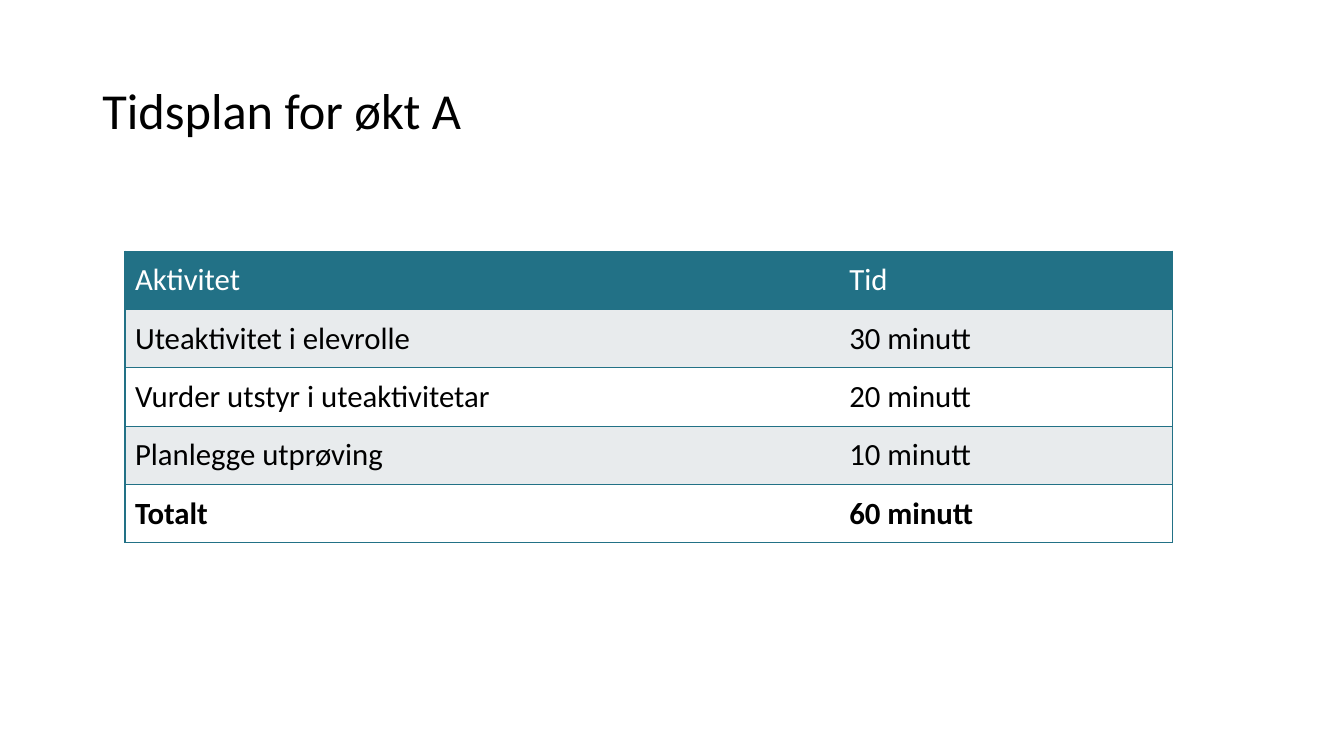
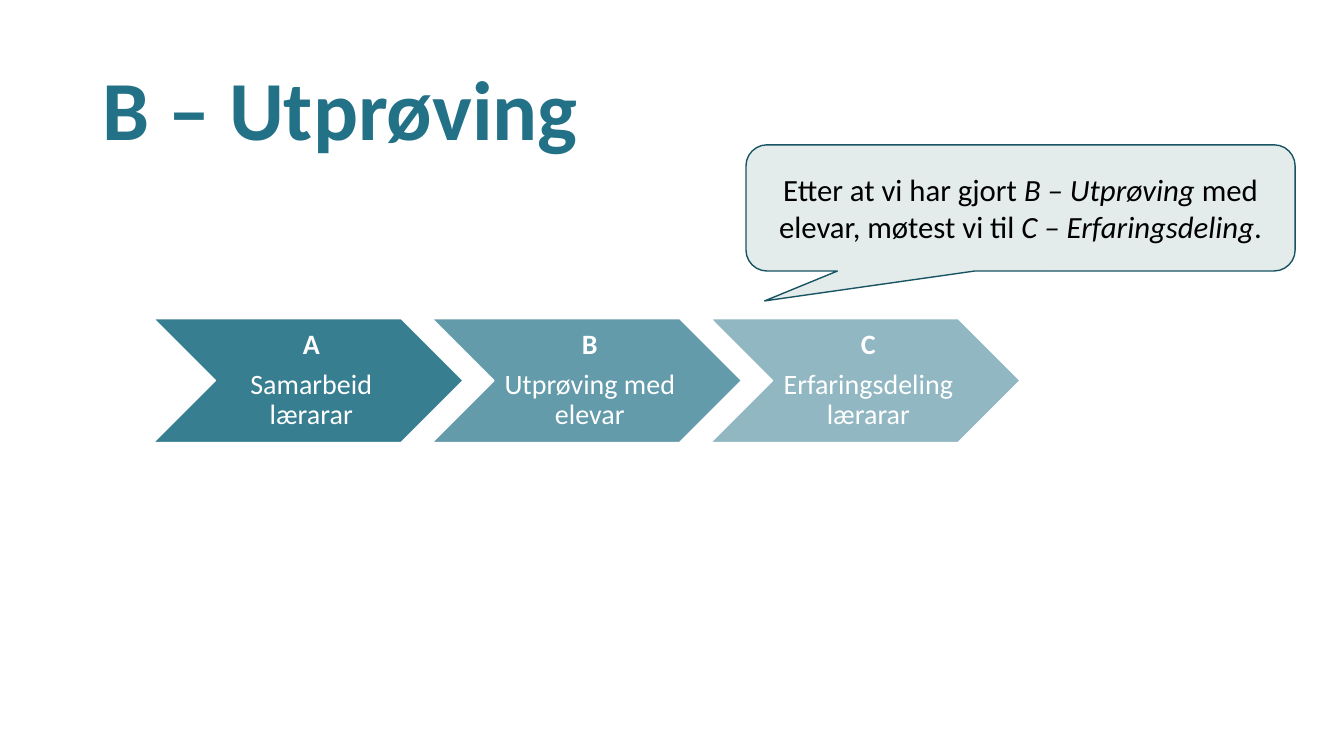
from dataclasses import dataclass

from lxml import etree
from pptx import Presentation
from pptx.dml.color import RGBColor
from pptx.enum.shapes import MSO_SHAPE
from pptx.enum.text import MSO_ANCHOR, PP_ALIGN
from pptx.oxml.ns import qn
from pptx.util import Cm, Pt

CHEVRON = MSO_SHAPE.CHEVRON
CALLOUT = MSO_SHAPE.ROUNDED_RECTANGULAR_CALLOUT
MIDDLE = MSO_ANCHOR.MIDDLE
LEFT, CENTER = PP_ALIGN.LEFT, PP_ALIGN.CENTER

FONT = "Calibri"
TEAL, DARK_TEAL = "227186", "195463"
BLACK, WHITE = "000000", "FFFFFF"
BAND_GREY, CALLOUT_FILL = "E8EBED", "E3ECEA"


@dataclass(frozen=True)
class Span:
    text: str
    bold: bool = False
    italic: bool = False


@dataclass(frozen=True)
class Box:
    left: float
    top: float
    width: float
    height: float

    def lengths(self) -> tuple:
        return Cm(self.left), Cm(self.top), Cm(self.width), Cm(self.height)


@dataclass(frozen=True)
class Step:
    letter: str
    label: str
    opacity: int


TITLE_BOX = Box(2.33, 1.01, 29.21, 3.68)
TABLE_BOX = Box(3.15, 6.33, 26.4, 7.35)
COLUMN_WIDTHS = (18, 8.4)
FIRST_STEP = Box(3.87, 8.03, 7.8, 3.12)
STEP_PITCH = 0.9 * FIRST_STEP.width
CALLOUT_BOX = Box(18.8, 3.65, 13.84, 3.18)

SCHEDULE = (
    ("Aktivitet", "Tid"),
    ("Uteaktivitet i elevrolle", "30 minutt"),
    ("Vurder utstyr i uteaktivitetar", "20 minutt"),
    ("Planlegge utprøving", "10 minutt"),
    ("Totalt", "60 minutt"),
)
STEPS = (
    Step("A", "Samarbeid lærarar", 90),
    Step("B", "Utprøving med elevar", 70),
    Step("C", "Erfaringsdeling lærarar", 50),
)
CALLOUT_SPANS = (
    Span("Etter at vi har gjort "),
    Span("B – Utprøving ", italic=True),
    Span("med elevar, møtest vi til "),
    Span("C – Erfaringsdeling", italic=True),
    Span("."),
)


def paint(color_owner, color: str) -> None:
    color_owner.solid()
    color_owner.fore_color.rgb = RGBColor.from_string(color)


def write(para, spans, size: float, color: str, align=LEFT, spacing: float = 1) -> None:
    para.alignment = align
    para.line_spacing = spacing
    for span in spans:
        run = para.add_run()
        run.text = span.text
        run.font.name = FONT
        run.font.size = Pt(size)
        run.font.bold = span.bold
        run.font.italic = span.italic
        paint(run.font.fill, color)


def add_text_frame(page, box: Box):
    frame = page.shapes.add_textbox(*box.lengths()).text_frame
    frame.word_wrap = True
    frame.vertical_anchor = MIDDLE
    return frame


def add_title(page, title: Span, size: float, color: str) -> None:
    frame = add_text_frame(page, TITLE_BOX)
    write(frame.paragraphs[0], [title], size, color, spacing=0.9)


def add_shape(page, kind, box: Box, fill: str, line: str):
    shape = page.shapes.add_shape(kind, *box.lengths())
    shape.shadow.inherit = False
    paint(shape.fill, fill)
    paint(shape.line.fill, line)
    shape.line.width = Pt(1)
    return shape


def set_opacity(shape, percent: int) -> None:
    color = shape.fill._xPr.find(qn("a:solidFill"))[0]
    etree.SubElement(color, qn("a:alpha"), val=str(percent * 1000))


def set_borders(cell, visible: str) -> None:
    properties = cell._tc.get_or_add_tcPr()
    for index, side in enumerate("LRTB"):
        line = etree.Element(qn(f"a:ln{side}"), w=str(Pt(1)))
        if side in visible:
            fill = etree.SubElement(line, qn("a:solidFill"))
            etree.SubElement(fill, qn("a:srgbClr"), val=TEAL)
        else:
            etree.SubElement(line, qn("a:noFill"))
        properties.insert(index, line)


def add_schedule(page) -> None:
    last_row = len(SCHEDULE) - 1
    table = page.shapes.add_table(
        len(SCHEDULE), len(COLUMN_WIDTHS), *TABLE_BOX.lengths()
    ).table
    for column, width in zip(table.columns, COLUMN_WIDTHS):
        column.width = Cm(width)
    for row, texts in enumerate(SCHEDULE):
        fill = TEAL if row == 0 else BAND_GREY if row % 2 else WHITE
        for column, text in enumerate(texts):
            cell = table.cell(row, column)
            cell.vertical_anchor = MIDDLE
            paint(cell.fill, fill)
            set_borders(cell, "RTB" if column else "LTB")
            span = Span(text, bold=row == last_row)
            color = BLACK if row else WHITE
            write(cell.text_frame.paragraphs[0], [span], 22, color)


def add_step(page, index: int, step: Step) -> None:
    left = FIRST_STEP.left + index * STEP_PITCH
    top, width, height = FIRST_STEP.top, FIRST_STEP.width, FIRST_STEP.height
    chevron = add_shape(page, CHEVRON, Box(left, top, width, height), TEAL, WHITE)
    set_opacity(chevron, step.opacity)
    frame = add_text_frame(page, Box(left + height / 2, top, width - height, height))
    frame.margin_left = Cm(0.23)
    frame.margin_right = frame.margin_top = frame.margin_bottom = Cm(0.08)
    for para, span in (
        (frame.paragraphs[0], Span(step.letter, bold=True)),
        (frame.add_paragraph(), Span(step.label)),
    ):
        write(para, [span], 20, WHITE, CENTER, 0.9)
        para.space_after = Pt(7)


def add_callout(page) -> None:
    callout = add_shape(page, CALLOUT, CALLOUT_BOX, CALLOUT_FILL, DARK_TEAL)
    for index, value in enumerate((-0.466, 0.737, 0.167)):
        callout.adjustments[index] = round(value, 3)
    frame = callout.text_frame
    frame.word_wrap = True
    frame.vertical_anchor = MIDDLE
    write(frame.paragraphs[0], CALLOUT_SPANS, 22, BLACK, CENTER)


def main() -> None:
    deck = Presentation()
    deck.slide_width, deck.slide_height = Cm(33.87), Cm(19.05)
    blank = deck.slide_layouts[6]

    schedule_page = deck.slides.add_slide(blank)
    add_title(schedule_page, Span("Tidsplan for økt A"), 36, BLACK)
    add_schedule(schedule_page)

    trial_page = deck.slides.add_slide(blank)
    add_title(trial_page, Span("B – Utprøving", bold=True), 60, TEAL)
    for index, step in enumerate(STEPS):
        add_step(trial_page, index, step)
    add_callout(trial_page)

    deck.save("out.pptx")


if __name__ == "__main__":
    main()
